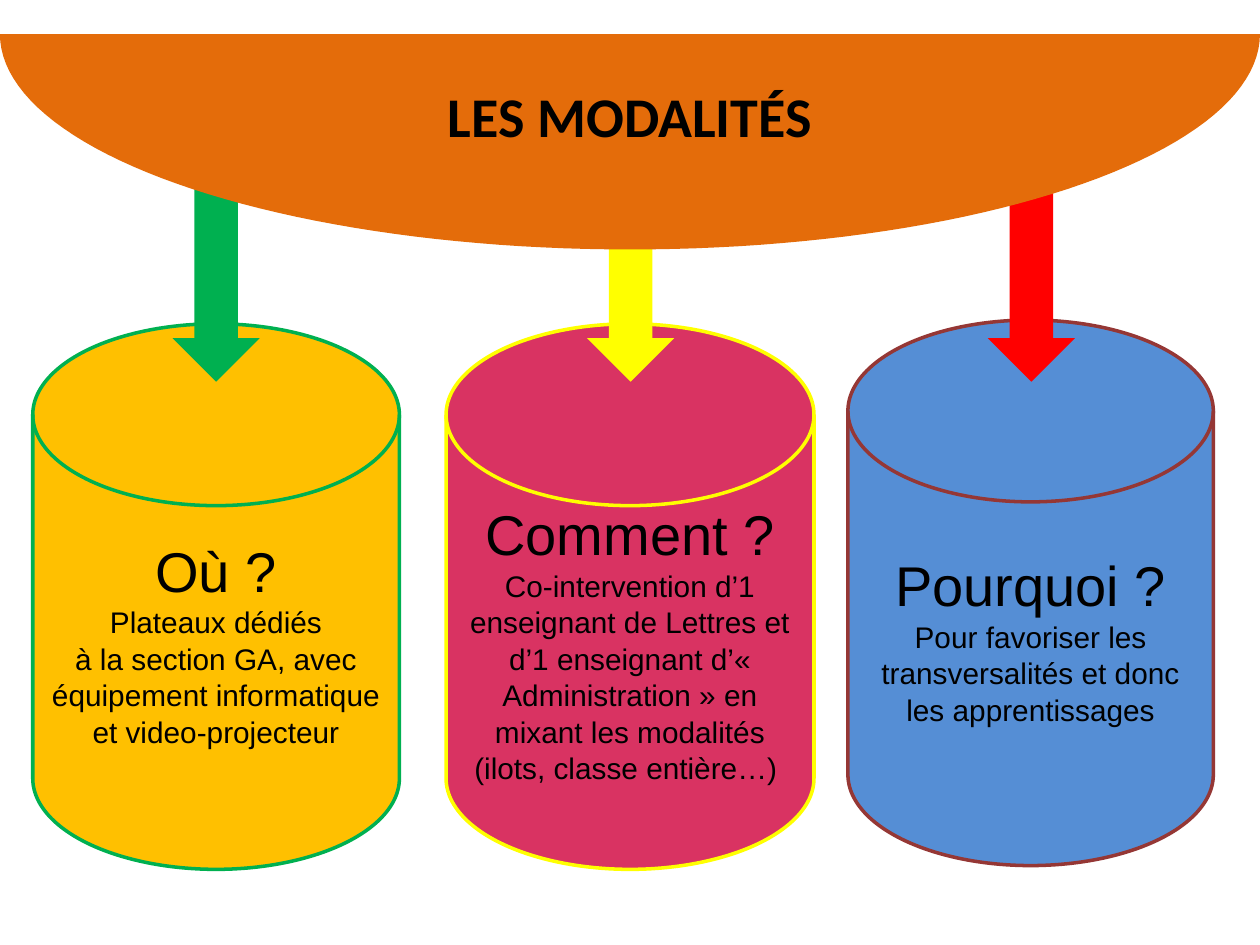
from math import cos, pi, sin

from pptx import Presentation
from pptx.dml.color import RGBColor
from pptx.enum.shapes import MSO_SHAPE as Preset
from pptx.enum.text import MSO_ANCHOR as Anchor, PP_ALIGN as Align
from pptx.util import Inches, Pt


def color(hex_code):
    return RGBColor.from_string(hex_code)


class SlideBuilder:
    ink = "000000"
    heading_size = 32
    detail_size = 17

    def __init__(self, slide):
        self.shapes = slide.shapes

    def paint(self, shape, fill, outline=None):
        shape.shadow.inherit = False
        shape.fill.solid()
        shape.fill.fore_color.rgb = color(fill)
        if outline:
            shape.line.color.rgb = color(outline)
            shape.line.width = Pt(2)
        else:
            shape.line.fill.background()

    def preset(self, kind, box, fill, outline=None):
        shape = self.shapes.add_shape(kind, *map(Inches, box))
        self.paint(shape, fill, outline)
        return shape

    def set_text(self, paragraph, text, size, font="Arial", bold=False):
        paragraph.text = text
        paragraph.alignment = Align.CENTER
        paragraph.font.name = font
        paragraph.font.size = Pt(size)
        paragraph.font.bold = bold
        paragraph.font.color.rgb = color(self.ink)

    def cylinder(self, box, fill, outline, question, answers):
        frame = self.preset(Preset.FLOWCHART_MAGNETIC_DISK, box, fill, outline).text_frame
        frame.word_wrap = True
        frame.vertical_anchor = Anchor.MIDDLE
        self.set_text(frame.paragraphs[0], question, self.heading_size)
        for answer in answers:
            self.set_text(frame.add_paragraph(), answer, self.detail_size)
        for paragraph in frame.paragraphs:
            paragraph.line_spacing = 1.02

    def arrow(self, left, fill):
        self.preset(Preset.DOWN_ARROW, (left, 1.46, 0.69, 1.57), fill)

    def half_ellipse(self, center_x, top, radius_x, radius_y, fill, steps=90):
        """Draw the lower half of an ellipse, flat side up."""
        angles = [pi * step / steps for step in range(steps + 1)]
        rim = [(Inches(center_x + radius_x * cos(angle)),
                Inches(top + radius_y * sin(angle))) for angle in angles]
        outline = self.shapes.build_freeform(*rim[0])
        outline.add_line_segments(rim[1:], close=True)
        self.paint(outline.convert_to_shape(), fill)

    def title(self, box, text):
        frame = self.shapes.add_textbox(*map(Inches, box)).text_frame
        frame.word_wrap = True
        self.set_text(frame.paragraphs[0], text, self.heading_size, "Calibri", bold=True)


PILLARS = [
    ((0.26, 2.57, 2.91, 4.33), "FFC000", "00B050", "Où ?",
     ["Plateaux dédiés",
      "à la section GA, avec équipement informatique et video-projecteur"]),
    ((3.54, 2.57, 2.92, 4.33), "D93362", "FFFF00", "Comment ?",
     ["Co-intervention d’1 enseignant de Lettres et d’1 enseignant "
      "d’« Administration » en mixant les modalités (ilots, classe entière…) "]),
    ((6.73, 2.54, 2.9, 4.33), "558ED5", "953735", "Pourquoi ?",
     ["Pour favoriser les transversalités et donc les apprentissages"]),
]
ARROWS = [(1.37, "00B050"), (4.66, "FFFF00"), (7.84, "FF0000")]


def main():
    deck = Presentation()
    deck.slide_width, deck.slide_height = Inches(10), Inches(7.5)
    builder = SlideBuilder(deck.slides.add_slide(deck.slide_layouts[6]))
    for pillar in PILLARS:
        builder.cylinder(*pillar)
    for arrow in ARROWS:
        builder.arrow(*arrow)
    builder.half_ellipse(5, 0.27, 5, 1.71, "E46C0A")
    builder.title((1.18, 0.6, 7.64, 0.85), "LES MODALITÉS")
    deck.save("out.pptx")


if __name__ == "__main__":
    main()
